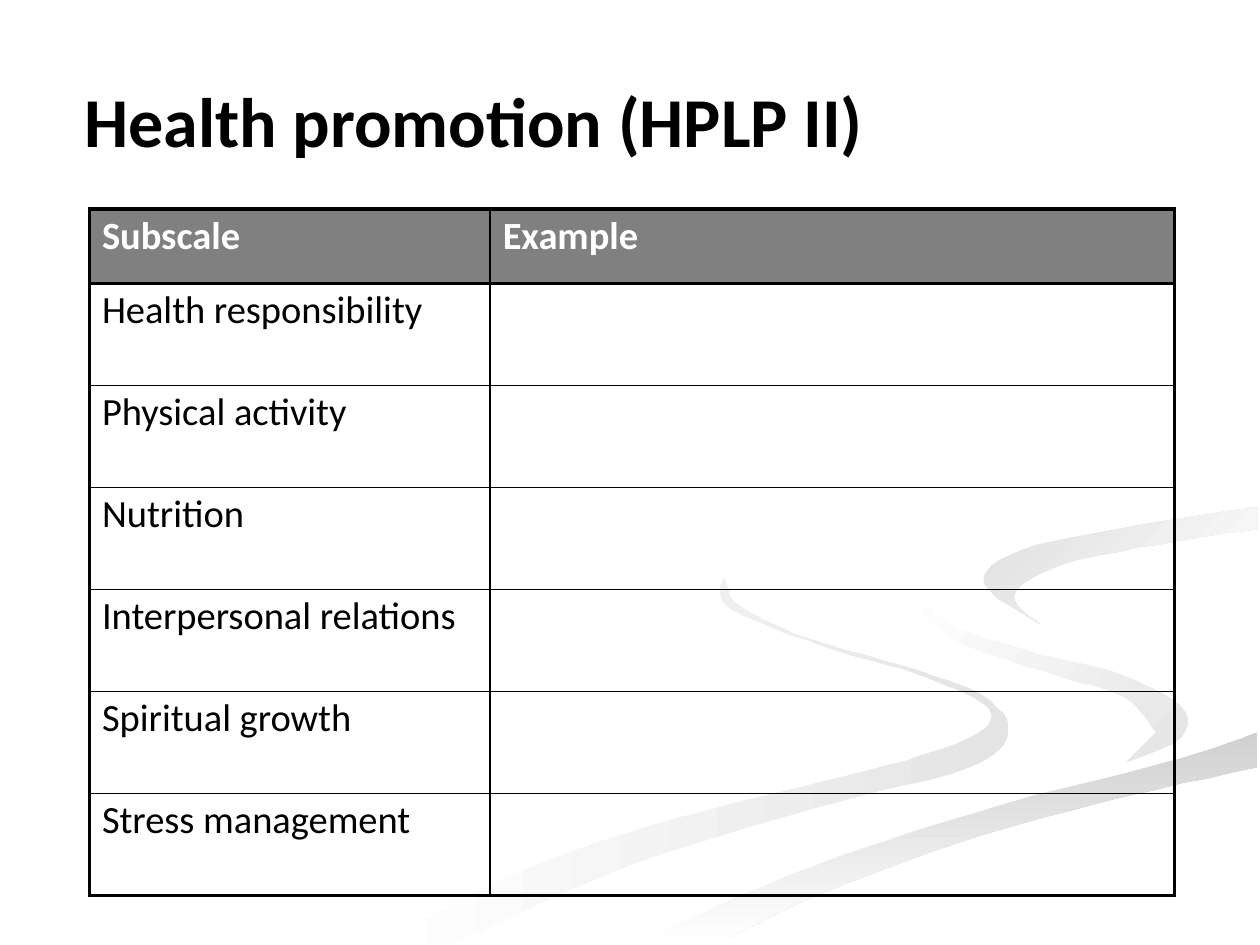
from dataclasses import dataclass

from lxml import etree
from pptx import Presentation
from pptx import util as u
from pptx.dml.color import RGBColor
from pptx.enum import text
from pptx.oxml import ns

Point = tuple[float, float]

COLORS = {
    "black": "000000",
    "white": "FFFFFF",
    "header": "808080",
    "ribbon_pale": "E4E4E4",
    "ribbon_mid": "DEDEDE",
    "ribbon_dark": "D0D0D0",
}
FONT = "Calibri"
GRID = u.Pt(0.72)  # one unit of the ribbon outlines
CURVE_STEPS = 6
THICK, THIN = u.Pt(2.25), u.Pt(1)


@dataclass
class Ribbon:
    start: str
    end: str
    angle: int  # counter-clockwise
    edges: list[list[Point]]  # smooth edges, joined by straight lines


LOWER_EDGE = [(998, 581), (936, 602), (797, 638), (662, 681), (569, 719), (503, 749)]
UPPER_EDGE = [(998, 402), (898, 418), (810, 437), (781, 463), (826, 496)]

RIBBONS = [
    # Long left ribbon
    Ribbon("white", "ribbon_pale", 0, [
        [(575, 459), (587, 481), (642, 507), (731, 533), (781, 553),
         (800, 581), (769, 609), (651, 640), (499, 687), (361, 749)],
        [(300, 749), (417, 690), (539, 649), (684, 613), (767, 587),
         (785, 562), (728, 535), (654, 513), (581, 484), (572, 464)],
    ]),
    # Short middle ribbon
    Ribbon("white", "ribbon_pale", 315, [
        [(724, 464), (745, 490), (811, 515), (888, 535), (939, 562),
         (937, 586), (894, 605)],
        [(918, 581), (892, 553), (838, 536), (766, 512), (733, 488)],
    ]),
    # Lower ribbon
    Ribbon("ribbon_dark", "white", 270, [
        LOWER_EDGE,
        [(571, 749), (649, 710), (785, 661), (903, 630), (998, 609)],
    ]),
    # White band between the shaded ribbons
    Ribbon("white", "white", 0, [
        [(999, 387), (874, 408), (755, 432), (725, 464), (759, 498), (831, 519),
         (905, 540), (943, 570), (911, 600), (780, 634), (619, 684), (477, 749)],
        LOWER_EDGE[::-1],
        [(999, 538), (904, 519), (832, 498), (781, 463), (822, 434),
         (933, 415), (999, 402)],
    ]),
    # Upper right ribbon
    Ribbon("ribbon_mid", "white", 315, [
        UPPER_EDGE,
        [(826, 496), (805, 472), (843, 448), (936, 429), (998, 420)],
    ]),
]

HEADINGS = ("Subscale", "Example")
SUBSCALES = (
    "Health responsibility", "Physical activity", "Nutrition",
    "Interpersonal relations", "Spiritual growth", "Stress management",
)


def rgb(name: str) -> RGBColor:
    return RGBColor.from_string(COLORS[name])


def set_font(paragraph, size: float, color: str, bold: bool) -> None:
    font = paragraph.font
    font.name, font.size, font.bold = FONT, u.Pt(size), bold
    font.color.rgb = rgb(color)


def smooth(knots: list[Point]) -> list[Point]:
    """Run a Catmull-Rom curve through the knots."""
    padded = [knots[0], *knots, knots[-1]]
    curve = [knots[0]]
    for a, b, c, d in zip(padded, padded[1:], padded[2:], padded[3:]):
        for step in range(1, CURVE_STEPS + 1):
            t = step / CURVE_STEPS
            curve.append(tuple(
                q + t * (r - p) / 2
                + t**2 * (2 * p - 5 * q + 4 * r - s) / 2
                + t**3 * (3 * q - p - 3 * r + s) / 2
                for p, q, r, s in zip(a, b, c, d)))
    return curve


def draw_ribbon(slide, ribbon: Ribbon) -> None:
    points = [point for edge in ribbon.edges for point in smooth(edge)]
    builder = slide.shapes.build_freeform(*points[0], scale=GRID)
    builder.add_line_segments(points[1:], close=True)
    shape = builder.convert_to_shape()
    shape.shadow.inherit = False
    shape.line.fill.background()
    if ribbon.start == ribbon.end:
        shape.fill.solid()
        shape.fill.fore_color.rgb = rgb(ribbon.start)
        return
    shape.fill.gradient()
    shape.fill.gradient_angle = ribbon.angle
    for stop, name in zip(shape.fill.gradient_stops, (ribbon.start, ribbon.end)):
        stop.color.rgb = rgb(name)


def set_borders(cell, widths: dict[str, int]) -> None:
    properties = cell._tc.get_or_add_tcPr()
    for index, (side, width) in enumerate(widths.items()):
        line = etree.Element(ns.qn(f"a:ln{side}"), w=str(int(width)))
        fill = etree.SubElement(line, ns.qn("a:solidFill"))
        etree.SubElement(fill, ns.qn("a:srgbClr"), val=COLORS["black"])
        properties.insert(index, line)


def draw_table(slide) -> None:
    rows = [HEADINGS] + [(name, "") for name in SUBSCALES]
    last = len(rows) - 1
    frame = slide.shapes.add_table(
        len(rows), 2, u.Pt(51.1), u.Pt(119.5), u.Pt(620), u.Pt(392.4))
    table = frame.table
    table.first_row = table.horz_banding = False
    for column, width in zip(table.columns, (229, 391)):
        column.width = u.Pt(width)
    for r, row in enumerate(rows):
        header = r == 0
        table.rows[r].height = u.Pt(42.5 if header else 58.3)
        for c, label in enumerate(row):
            cell = table.cell(r, c)
            if header:
                cell.fill.solid()
                cell.fill.fore_color.rgb = rgb("header")
            else:
                cell.fill.background()
            set_borders(cell, {
                "L": THICK if c == 0 else THIN,
                "R": THICK if c == 1 else THIN,
                "T": THICK if r <= 1 else THIN,
                "B": THICK if r in (0, last) else THIN,
            })
            cell.text = label
            paragraph = cell.text_frame.paragraphs[0]
            paragraph.line_spacing = 0.9
            set_font(paragraph, 22, "white" if header else "black", header)


def draw_title(slide, label: str) -> None:
    title = slide.shapes.title
    title.left, title.top = u.Pt(48.2), u.Pt(20.2)
    title.width, title.height = u.Pt(535), u.Pt(72)
    frame = title.text_frame
    frame.text = label
    frame.margin_left = frame.margin_right = 0
    frame.margin_top = frame.margin_bottom = 0
    frame.vertical_anchor = text.MSO_ANCHOR.BOTTOM
    frame.auto_size = text.MSO_AUTO_SIZE.NONE
    paragraph = frame.paragraphs[0]
    paragraph.alignment = text.PP_ALIGN.LEFT
    set_font(paragraph, 40, "black", True)


def main() -> None:
    presentation = Presentation()
    presentation.slide_width, presentation.slide_height = u.Pt(720), u.Pt(540)
    slide = presentation.slides.add_slide(presentation.slide_layouts[5])
    for ribbon in RIBBONS:
        draw_ribbon(slide, ribbon)
    draw_title(slide, "Health promotion (HPLP II)")
    draw_table(slide)
    presentation.save("out.pptx")


if __name__ == "__main__":
    main()
